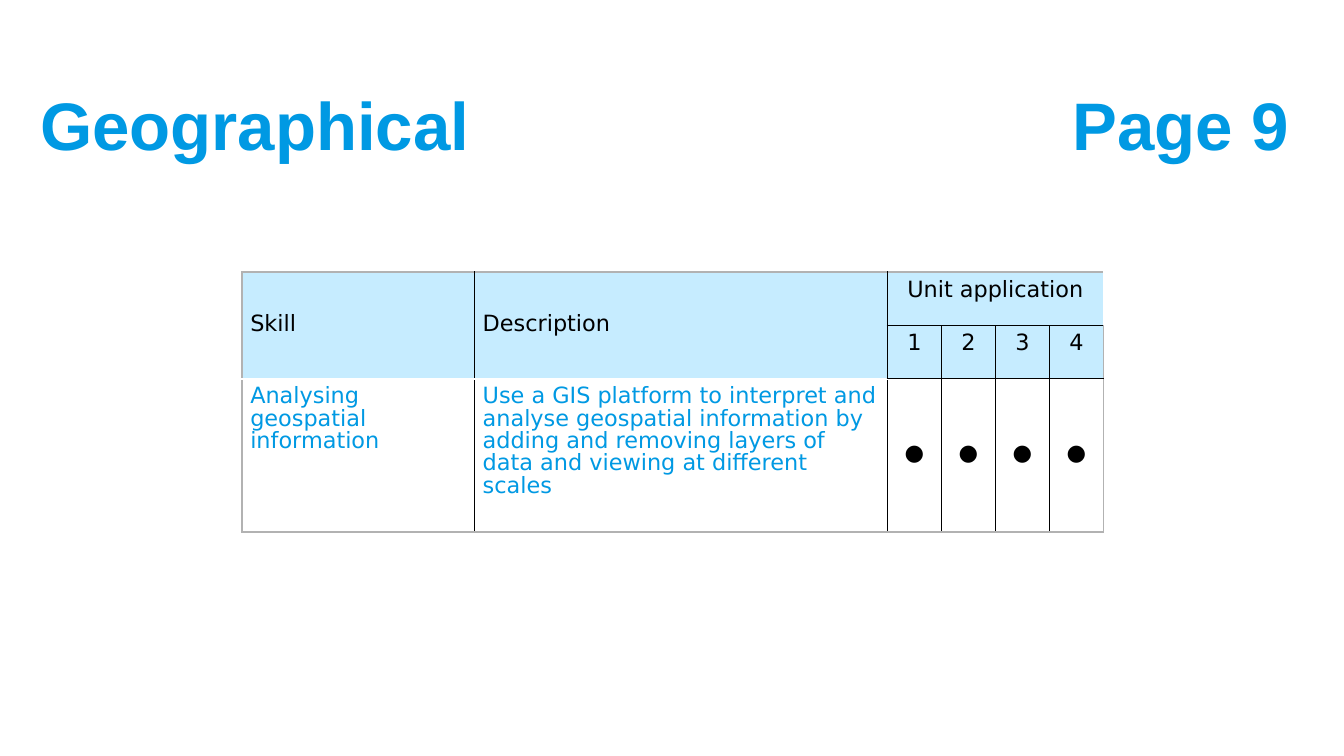
from lxml.etree import SubElement
from pptx import Presentation
from pptx.dml.color import RGBColor
from pptx.enum.text import MSO_ANCHOR as Anchor, PP_ALIGN as Align
from pptx.oxml.ns import qn
from pptx.util import Pt

BLUE = RGBColor(0x00, 0x99, 0xE3)
PALE_BLUE = RGBColor(0xC6, 0xEC, 0xFF)
BLACK = RGBColor(0x00, 0x00, 0x00)
GREY = RGBColor(0xB2, 0xB2, 0xB2)

COLUMN_WIDTHS = [124.5, 221.1] + [28.95] * 4
ROW_HEIGHTS = [28.6, 28.6, 82]
UNIT_COLUMNS = range(2, 6)
LAST_ROW, LAST_COLUMN = len(ROW_HEIGHTS) - 1, len(COLUMN_WIDTHS) - 1


def merge_origin(row, column):
    """Return the top-left cell of the merged area that holds this cell."""
    if row < 2 and column < 2:
        return 0, column
    if row == 0 and column in UNIT_COLUMNS:
        return 0, UNIT_COLUMNS[0]
    return row, column


class SlideBuilder:
    heading_font = "Arial"
    table_font = "DejaVu Sans"

    def __init__(self, slide):
        self.slide = slide

    def heading(self, text, left, top, width, height, anchor):
        shape = self.slide.shapes.add_textbox(Pt(left), Pt(top), Pt(width), Pt(height))
        frame = shape.text_frame
        frame.word_wrap = True
        frame.vertical_anchor = anchor
        frame.text = text
        font = frame.paragraphs[0].font
        font.name, font.size, font.bold = self.heading_font, Pt(36), True
        font.color.rgb = BLUE

    def table(self, left, top):
        shape = self.slide.shapes.add_table(
            len(ROW_HEIGHTS), len(COLUMN_WIDTHS), Pt(left), Pt(top),
            Pt(sum(COLUMN_WIDTHS)), Pt(sum(ROW_HEIGHTS)))
        table = shape.table
        table.first_row = table.horz_banding = False
        for column, width in zip(table.columns, COLUMN_WIDTHS):
            column.width = Pt(width)
        for row, height in zip(table.rows, ROW_HEIGHTS):
            row.height = Pt(height)
        for row in range(len(ROW_HEIGHTS)):
            for column in range(len(COLUMN_WIDTHS)):
                cell = table.cell(row, column)
                self.borders(cell, row, column)
                if row < LAST_ROW:
                    cell.fill.solid()
                    cell.fill.fore_color.rgb = PALE_BLUE
                else:
                    cell.fill.background()
        for column in range(2):
            table.cell(0, column).merge(table.cell(1, column))
        table.cell(0, UNIT_COLUMNS[0]).merge(table.cell(0, LAST_COLUMN))
        return table

    def borders(self, cell, row, column):
        """Draw a grey outer frame and black inner lines, none inside merges."""
        properties = cell._tc.get_or_add_tcPr()
        sides = [
            ("a:lnL", (row, column - 1), column == 0, 0.5 if column == 1 else 1),
            ("a:lnR", (row, column + 1), column == LAST_COLUMN, 0.5 if column == 0 else 1),
            ("a:lnT", (row - 1, column), row == 0, 0.5),
            ("a:lnB", (row + 1, column), row == LAST_ROW, 0.5),
        ]
        for tag, neighbour, outer, width in sides:
            if not outer and merge_origin(*neighbour) == merge_origin(row, column):
                continue
            line = SubElement(properties, qn(tag), w=str(Pt(1 if outer else width)))
            fill = SubElement(line, qn("a:solidFill"))
            SubElement(fill, qn("a:srgbClr"), val=str(GREY if outer else BLACK))

    def cell_text(self, cell, text, color=BLACK, align=Align.LEFT,
                  anchor=Anchor.TOP, spacing=12):
        cell.margin_left = cell.margin_right = Pt(4.3)
        cell.margin_top = cell.margin_bottom = Pt(4.3)
        cell.vertical_anchor = anchor
        cell.text = text
        paragraph = cell.text_frame.paragraphs[0]
        paragraph.alignment = align
        paragraph.line_spacing = Pt(spacing)
        font = paragraph.font
        font.name, font.size, font.bold = self.table_font, Pt(12), False
        font.color.rgb = color


def main():
    presentation = Presentation()
    presentation.slide_width, presentation.slide_height = Pt(720), Pt(405)
    builder = SlideBuilder(presentation.slides.add_slide(presentation.slide_layouts[6]))

    builder.heading("Geographical", 14.4, 32.4, 249, 67.7, Anchor.MIDDLE)
    builder.heading("Page 9", 567.4, 41, 138.2, 51, Anchor.TOP)

    table = builder.table(129.8, 145.8)
    for column, label in enumerate(["Skill", "Description"]):
        builder.cell_text(table.cell(0, column), label, anchor=Anchor.MIDDLE)
    builder.cell_text(table.cell(0, UNIT_COLUMNS[0]), "Unit application", align=Align.CENTER)
    for unit, column in enumerate(UNIT_COLUMNS, start=1):
        builder.cell_text(table.cell(1, column), str(unit), align=Align.CENTER)
        builder.cell_text(table.cell(2, column), "●", align=Align.CENTER,
                          anchor=Anchor.MIDDLE, spacing=11)
    builder.cell_text(table.cell(2, 0), "Analysing geospatial information", BLUE)
    builder.cell_text(
        table.cell(2, 1),
        "Use a GIS platform to interpret and analyse geospatial information by "
        "adding and removing layers of data and viewing at different scales", BLUE)

    presentation.save("out.pptx")


if __name__ == "__main__":
    main()
